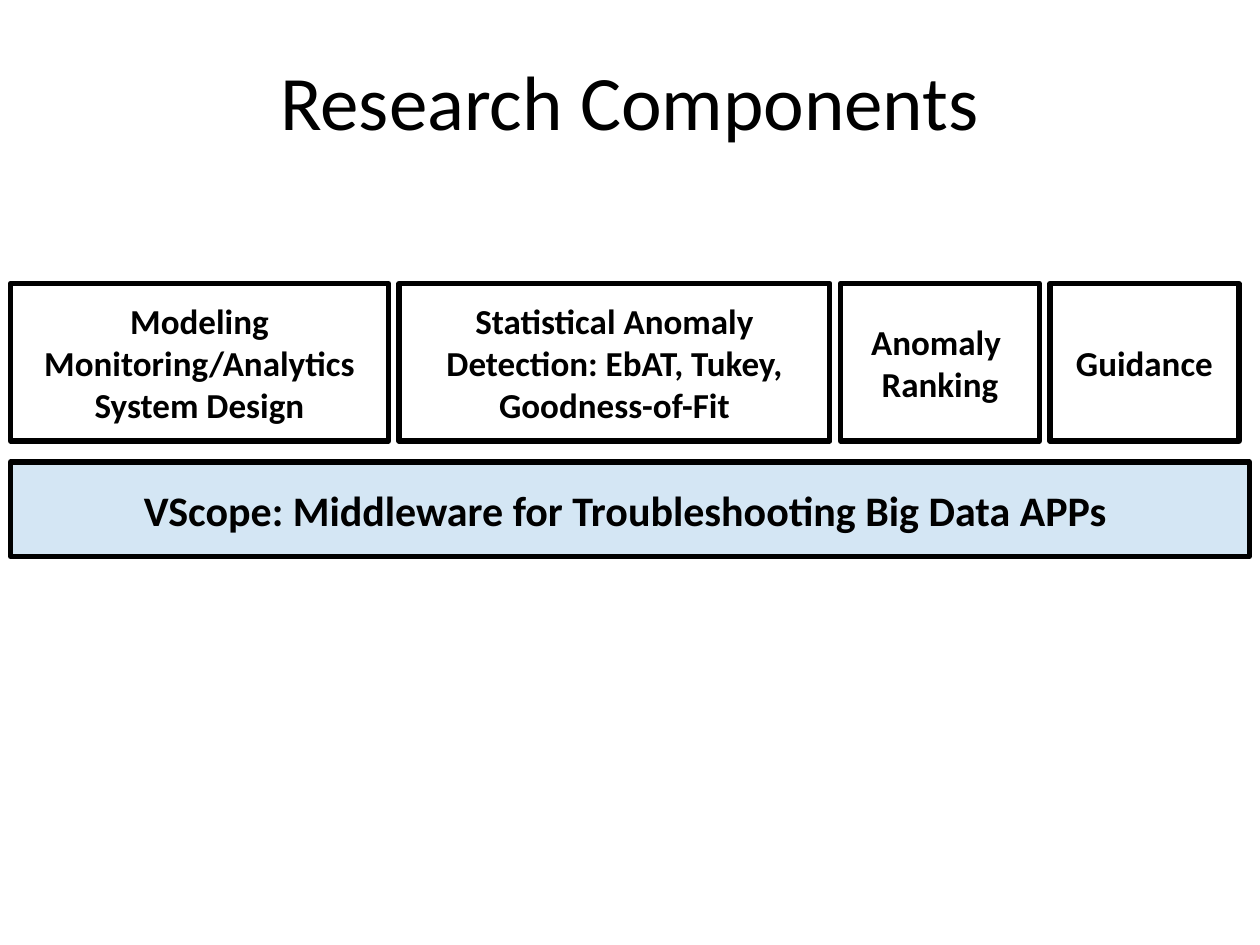
from dataclasses import dataclass

from lxml import etree
from pptx import Presentation
from pptx.dml.color import RGBColor
from pptx.enum.shapes import MSO_SHAPE
from pptx.enum.text import MSO_ANCHOR, PP_ALIGN
from pptx.oxml.ns import qn
from pptx.util import Inches, Pt

RECTANGLE = MSO_SHAPE.RECTANGLE
MIDDLE = MSO_ANCHOR.MIDDLE
CENTER = PP_ALIGN.CENTER
TITLE_ONLY_LAYOUT = 5


@dataclass(frozen=True)
class Theme:
    font: str = "Calibri"
    ink: RGBColor = RGBColor(0, 0, 0)
    paper: RGBColor = RGBColor(255, 255, 255)
    accent: RGBColor = RGBColor(0, 112, 192)
    accent_opacity: int = 17
    title_size: int = 44
    component_size: int = 20
    middleware_size: int = 24
    outline: int = 3


THEME = Theme()
GAP = 1 / 12
COMPONENT_TOP = 2.25
COMPONENT_HEIGHT = 1.25
COMPONENTS = [
    ("Modeling Monitoring/Analytics System Design", 3, None),
    ("Statistical Anomaly Detection: EbAT, Tukey, Goodness-of-Fit", 3.42, None),
    ("Anomaly \nRanking", 1.58, THEME.paper),
    ("Guidance", 1.5, THEME.paper),
]


def write_text(shape, text, size, bold):
    text_frame = shape.text_frame
    text_frame.text = text
    text_frame.word_wrap = True
    text_frame.vertical_anchor = MIDDLE
    for paragraph in text_frame.paragraphs:
        paragraph.alignment = CENTER
        for run in paragraph.runs:
            run.font.name = THEME.font
            run.font.size = Pt(size)
            run.font.bold = bold
            run.font.color.rgb = THEME.ink


def add_title(slide, text):
    title = slide.shapes.title
    title.left, title.top = Inches(0.5), Inches(0.17)
    title.width, title.height = Inches(9), Inches(1.25)
    write_text(title, text, THEME.title_size, False)


def add_box(slide, text, left, top, width, height, size, fill=None):
    box = slide.shapes.add_shape(
        RECTANGLE, Inches(left), Inches(top), Inches(width), Inches(height)
    )
    box.shadow.inherit = False
    box.line.color.rgb = THEME.ink
    box.line.width = Pt(THEME.outline)
    if fill is None:
        box.fill.background()
    else:
        box.fill.solid()
        box.fill.fore_color.rgb = fill
    write_text(box, text, size, True)
    return box


def set_fill_opacity(shape, percent):
    color = shape.element.spPr.find(qn("a:solidFill")).find(qn("a:srgbClr"))
    etree.SubElement(color, qn("a:alpha"), val=str(percent * 1000))


def add_components(slide):
    left = GAP
    for text, width, fill in COMPONENTS:
        add_box(slide, text, left, COMPONENT_TOP, width, COMPONENT_HEIGHT,
                THEME.component_size, fill)
        left += width + GAP


def add_middleware(slide):
    top = COMPONENT_TOP + COMPONENT_HEIGHT + 2 * GAP
    middleware = add_box(
        slide, "VScope: Middleware for Troubleshooting Big Data APPs ",
        GAP, top, 10 - 2 * GAP, 0.75, THEME.middleware_size, THEME.accent,
    )
    set_fill_opacity(middleware, THEME.accent_opacity)


def main():
    presentation = Presentation()
    presentation.slide_width = Inches(10)
    presentation.slide_height = Inches(7.5)
    slide = presentation.slides.add_slide(
        presentation.slide_layouts[TITLE_ONLY_LAYOUT]
    )
    add_title(slide, "Research Components")
    add_components(slide)
    add_middleware(slide)
    presentation.save("out.pptx")


if __name__ == "__main__":
    main()
